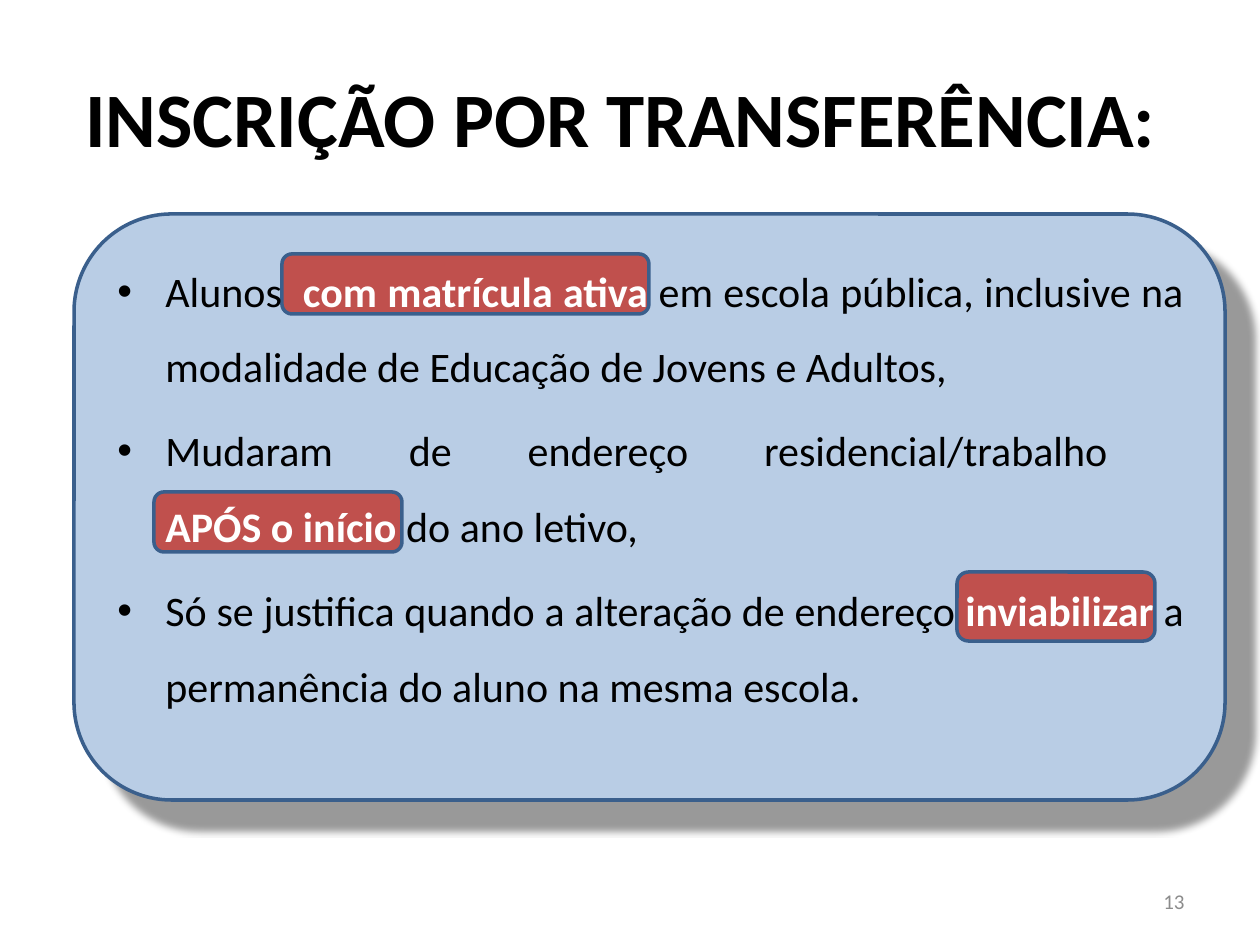
"""Build the slide on enrolment by transfer."""
from lxml import etree
from pptx import Presentation
from pptx.dml.color import RGBColor
from pptx.enum.shapes import MSO_SHAPE
from pptx.enum.text import MSO_ANCHOR, PP_ALIGN
from pptx.oxml.ns import qn
from pptx.util import Emu, Pt

ROUNDED = MSO_SHAPE.ROUNDED_RECTANGLE
TOP, MIDDLE = MSO_ANCHOR.TOP, MSO_ANCHOR.MIDDLE
CENTER, JUSTIFY, RIGHT = PP_ALIGN.CENTER, PP_ALIGN.JUSTIFY, PP_ALIGN.RIGHT

BLACK = RGBColor(0x00, 0x00, 0x00)
WHITE = RGBColor(0xFF, 0xFF, 0xFF)
GRAY = RGBColor(0x8C, 0x8C, 0x8C)
PALE_BLUE = RGBColor(0xB9, 0xCD, 0xE5)
BORDER_BLUE = RGBColor(0x3A, 0x5F, 0x8C)
RED = RGBColor(0xC0, 0x50, 0x4D)

FONT = "Calibri"
PX_PER_INCH = 126

TITLE = "INSCRIÇÃO POR TRANSFERÊNCIA: "
PAGE_NUMBER = "13"
# Each rule: lead, break after the lead, highlighted words, rest
RULES = [
    ("Alunos  ", False, "com matrícula ativa ",
     "em escola pública, inclusive na modalidade de Educação de Jovens e Adultos,"),
    ("Mudaram de endereço residencial/trabalho ", True, "APÓS o início ",
     "do ano letivo,"),
    ("Só se justifica quando a alteração de endereço ", False, "inviabilizar ",
     "a permanência do aluno na mesma escola."),
]

TITLE_BOX = (63, 38, 1134, 158)
PANEL_BOX = (74, 214, 1151, 586)
RULES_BOX = (105, 234, 1091, 595)
NUMBER_BOX = (903, 876, 294, 50)
HIGHLIGHT_BOXES = [(282, 254, 367, 60), (154, 492, 248, 60), (957, 572, 198, 69)]


def px(length):
    return Emu(round(length * 914400 / PX_PER_INCH))


def add_rounded(slide, box, fill):
    rounded = slide.shapes.add_shape(ROUNDED, *map(px, box))
    rounded.shadow.inherit = False
    rounded.fill.solid()
    rounded.fill.fore_color.rgb = fill
    rounded.line.color.rgb = BORDER_BLUE
    rounded.line.width = Pt(2)
    return rounded


def add_drop_shadow(panel):
    effects = panel._element.spPr.find(qn("a:effectLst"))
    shadow = etree.SubElement(effects, qn("a:outerShdw"), blurRad=str(Pt(4)),
                              dist=str(Pt(23)), dir="2700000", algn="tl",
                              rotWithShape="0")
    color = etree.SubElement(shadow, qn("a:srgbClr"), val="000000")
    etree.SubElement(color, qn("a:alpha"), val="40000")


def add_frame(slide, box, anchor):
    frame = slide.shapes.add_textbox(*map(px, box)).text_frame
    frame.word_wrap = True
    frame.vertical_anchor = anchor
    return frame


def add_run(paragraph, text, size, color, bold=False):
    run = paragraph.add_run()
    run.text = text
    run.font.name = FONT
    run.font.size = Pt(size)
    run.font.bold = bold
    run.font.color.rgb = color


def add_label(slide, box, text, size, color, align, bold=False):
    paragraph = add_frame(slide, box, MIDDLE).paragraphs[0]
    paragraph.alignment = align
    add_run(paragraph, text, size, color, bold)


def add_bullet(paragraph):
    properties = paragraph._p.get_or_add_pPr()
    properties.set("marL", str(px(48)))
    properties.set("indent", str(-px(48)))
    etree.SubElement(properties, qn("a:buFont"), typeface="Arial")
    etree.SubElement(properties, qn("a:buChar"), char="•")


def add_rules(slide):
    frame = add_frame(slide, RULES_BOX, TOP)
    for index, (lead, breaks, highlight, rest) in enumerate(RULES):
        paragraph = frame.add_paragraph() if index else frame.paragraphs[0]
        add_bullet(paragraph)
        paragraph.alignment = JUSTIFY
        paragraph.line_spacing = 1.5
        if index:
            paragraph.space_before = Pt(4.8)
        add_run(paragraph, lead, 24, BLACK)
        if breaks:
            paragraph.add_line_break()
        add_run(paragraph, highlight, 24, WHITE, bold=True)
        add_run(paragraph, rest, 24, BLACK)


def main():
    deck = Presentation()
    deck.slide_width, deck.slide_height = px(1260), px(945)
    slide = deck.slides.add_slide(deck.slide_layouts[6])
    add_drop_shadow(add_rounded(slide, PANEL_BOX, PALE_BLUE))
    add_label(slide, TITLE_BOX, TITLE, 44, BLACK, CENTER, bold=True)
    for box in HIGHLIGHT_BOXES:
        add_rounded(slide, box, RED)
    add_rules(slide)
    add_label(slide, NUMBER_BOX, PAGE_NUMBER, 12, GRAY, RIGHT)
    deck.save("out.pptx")


if __name__ == "__main__":
    main()
